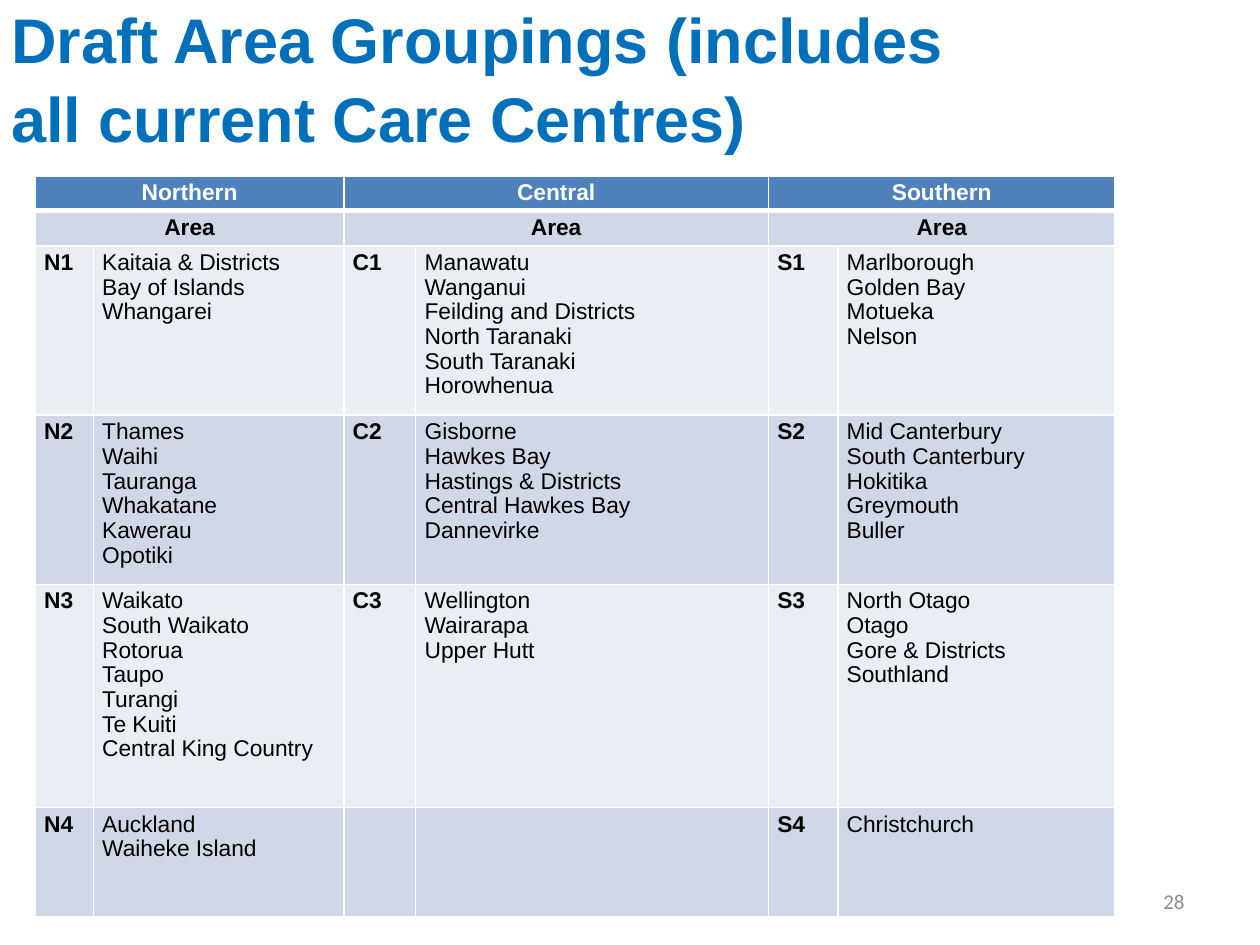
from lxml import etree
from pptx import Presentation, util as u
from pptx.dml.color import RGBColor
from pptx.enum import text
from pptx.oxml import ns

TITLE = "Draft Area Groupings (includes\vall current Care Centres)"
PAGE_NUMBER = "28"
REGIONS = [
    ("Northern", [
        ("N1", ["Kaitaia & Districts", "Bay of Islands", "Whangarei"]),
        ("N2", ["Thames", "Waihi", "Tauranga", "Whakatane", "Kawerau", "Opotiki"]),
        ("N3", ["Waikato", "South Waikato", "Rotorua", "Taupo", "Turangi", "Te Kuiti",
                "Central King Country"]),
        ("N4", ["Auckland", "Waiheke Island"]),
    ]),
    ("Central", [
        ("C1", ["Manawatu", "Wanganui", "Feilding and Districts", "North Taranaki",
                "South Taranaki", "Horowhenua"]),
        ("C2", ["Gisborne", "Hawkes Bay", "Hastings & Districts", "Central Hawkes Bay",
                "Dannevirke"]),
        ("C3", ["Wellington", "Wairarapa", "Upper Hutt"]),
        ("", []),
    ]),
    ("Southern", [
        ("S1", ["Marlborough", "Golden Bay", "Motueka", "Nelson"]),
        ("S2", ["Mid Canterbury", "South Canterbury", "Hokitika", "Greymouth", "Buller"]),
        ("S3", ["North Otago", "Otago", "Gore & Districts", "Southland"]),
        ("S4", ["Christchurch"]),
    ]),
]
COLUMN_WIDTHS = [1.17, 5.05, 1.45, 7.11, 1.4, 5.59]
ROW_HEIGHTS = [0.68, 0.71, 3.41, 3.41, 4.5, 2.21]
HEADER_FILL, BAND_FILLS = "4F81BD", ["E9EDF4", "D0D8E8"]
WHITE, BLACK = "FFFFFF", "000000"
LEFT, CENTRE, RIGHT = text.PP_ALIGN.LEFT, text.PP_ALIGN.CENTER, text.PP_ALIGN.RIGHT


def style(paragraph, size, color, bold=False, align=LEFT, name="Arial", spacing=1.0):
    paragraph.alignment = align
    paragraph.line_spacing = spacing
    font = paragraph.font
    font.name, font.size, font.bold = name, u.Pt(size), bold
    font.color.rgb = RGBColor.from_string(color)


def add_borders(cell, top, bottom):
    properties = cell._tc.get_or_add_tcPr()
    for side, width in (("L", 1), ("R", 1), ("T", top), ("B", bottom)):
        line = etree.SubElement(properties, ns.qn(f"a:ln{side}"), w=str(u.Pt(width)))
        fill = etree.SubElement(line, ns.qn("a:solidFill"))
        etree.SubElement(fill, ns.qn("a:srgbClr"), val=WHITE)


def fill_cell(cell, lines, color=BLACK, bold=False, align=LEFT):
    cell.text = "\n".join(lines)
    for paragraph in cell.text_frame.paragraphs:
        style(paragraph, 13, color, bold, align, spacing=0.97)


def add_title(slide):
    title = slide.shapes.title
    title.left, title.top, title.width, title.height = map(u.Cm, (-0.03, 0.33, 23.83, 2.39))
    frame = title.text_frame
    frame.auto_size = text.MSO_AUTO_SIZE.NONE
    frame.vertical_anchor = text.MSO_ANCHOR.MIDDLE
    frame.text = TITLE
    style(frame.paragraphs[0], 36, "0070BB", bold=True, spacing=1.05)


def add_area_table(slide):
    table = slide.shapes.add_table(
        len(ROW_HEIGHTS), len(COLUMN_WIDTHS), u.Cm(0.71), u.Cm(3.55),
        u.Cm(sum(COLUMN_WIDTHS)), u.Cm(sum(ROW_HEIGHTS))).table
    for column, width in zip(table.columns, COLUMN_WIDTHS):
        column.width = u.Cm(width)
    for r, (row, height) in enumerate(zip(table.rows, ROW_HEIGHTS)):
        row.height = u.Cm(height)
        for cell in row.cells:
            cell.margin_left = cell.margin_right = u.Cm(0.18)
            cell.margin_top = cell.margin_bottom = u.Cm(0.1)
            add_borders(cell, 3 if r == 1 else 1, 3 if r == 0 else 1)
            cell.fill.solid()
            cell.fill.fore_color.rgb = RGBColor.from_string(
                BAND_FILLS[r % 2] if r else HEADER_FILL)
    for left, (region, areas) in zip(range(0, len(COLUMN_WIDTHS), 2), REGIONS):
        for r, (heading, color) in enumerate([(region, WHITE), ("Area", BLACK)]):
            table.cell(r, left).merge(table.cell(r, left + 1))
            fill_cell(table.cell(r, left), [heading], color, True, CENTRE)
        for r, (code, centres) in enumerate(areas, 2):
            fill_cell(table.cell(r, left), [code], bold=True)
            fill_cell(table.cell(r, left + 1), centres)


def add_page_number(slide):
    frame = slide.shapes.add_textbox(*map(u.Cm, (18.21, 17.65, 5.92, 1.02))).text_frame
    frame.word_wrap = True
    frame.vertical_anchor = text.MSO_ANCHOR.MIDDLE
    frame.text = PAGE_NUMBER
    style(frame.paragraphs[0], 12, "8C8C8C", align=RIGHT, name="Calibri")


def main():
    """Build the slide of draft area groupings."""
    deck = Presentation()
    deck.slide_width, deck.slide_height = u.Cm(25.4), u.Cm(19.05)
    slide = deck.slides.add_slide(deck.slide_layouts[5])
    add_title(slide)
    add_area_table(slide)
    add_page_number(slide)
    deck.save("out.pptx")


if __name__ == "__main__":
    main()
